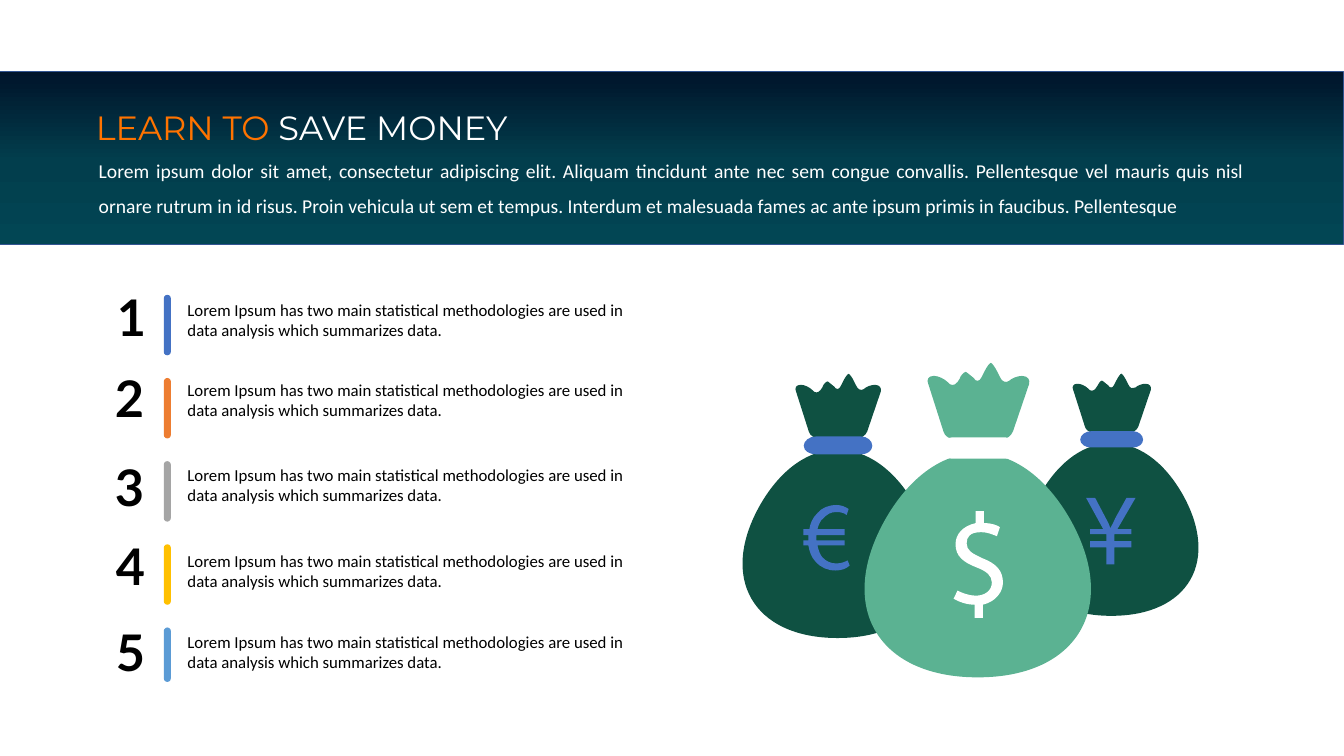
from copy import deepcopy
from dataclasses import dataclass

from lxml.etree import SubElement
from pptx import Presentation
from pptx.dml.color import RGBColor
from pptx.enum.shapes import MSO_SHAPE
from pptx.enum.text import MSO_ANCHOR, MSO_AUTO_SIZE, PP_ALIGN
from pptx.oxml.ns import qn
from pptx.util import Emu, Inches, Pt

COLS, ROWS = 1333.33, 750  # grid cells of a hundredth of an inch
Path = list[tuple[int, ...]]  # pairs are lines, sixes are cubic curves

BODY: Path = [
    (0, 0), (-100, 0, -141, -71, -91, -158),
    (-41, -244, 41, -244, 91, -158), (141, -71, 100, 0, 0, 0),
]
NECK: Path = [
    (44, -299), (40, -299, 34, -297, 31, -294), (28, -292, 24, -293, 22, -298),
    (19, -304), (17, -308, 14, -312, 13, -312), (12, -312, 9, -308, 7, -304),
    (4, -298), (2, -293, -2, -293, -4, -297), (-8, -300, -11, -303, -12, -303),
    (-13, -303, -17, -300, -18, -296), (-20, -293),
    (-23, -289, -27, -289, -30, -293), (-33, -296, -39, -299, -43, -299),
    (-44, -299), (-49, -299, -51, -295, -49, -291), (-34, -244),
    (-33, -239, -27, -236, -23, -236), (24, -236),
    (28, -236, 33, -239, 35, -244), (51, -291), (52, -295, 50, -299, 44, -299),
]
TIE: Path = [
    (41, -227), (41, -221, 35, -217, 28, -217), (-26, -217),
    (-33, -217, -40, -221, -40, -227), (-40, -233, -33, -238, -26, -238),
    (28, -238), (35, -238, 41, -233, 41, -227),
]
EURO: Path = [
    (12, -72), (9, -69, 4, -67, -2, -67), (-10, -67, -17, -70, -22, -76),
    (-26, -80, -28, -86, -29, -92), (-34, -92), (-34, -97), (-29, -97),
    (-29, -102), (-34, -102), (-34, -108), (-28, -108),
    (-27, -114, -25, -119, -20, -124), (-16, -129, -9, -132, -1, -132),
    (4, -132, 8, -130, 11, -128), (9, -122), (7, -124, 3, -125, -1, -125),
    (-7, -125, -10, -123, -14, -119), (-17, -117, -19, -112, -20, -108),
    (7, -108), (7, -102), (-21, -102), (-21, -97), (7, -97), (7, -92),
    (-20, -92), (-19, -87, -17, -82, -15, -80), (-11, -76, -7, -74, -1, -74),
    (4, -74, 8, -76, 10, -77),
]
YEN: Path = [
    (-5, -51), (-5, -68), (-21, -68), (-21, -74), (-5, -74), (-5, -81),
    (-21, -81), (-21, -86), (-8, -86), (-25, -117), (-16, -117), (-5, -96),
    (-3, -93, -2, -90, -1, -87), (1, -90, 2, -93, 4, -97), (15, -117),
    (24, -117), (6, -86), (20, -86), (20, -81), (3, -81), (3, -74), (20, -74),
    (20, -68), (3, -68), (3, -51),
]
DOLLAR: Path = [
    (-3, -59), (-3, -72), (-11, -72, -19, -75, -24, -78), (-20, -86),
    (-16, -84, -9, -81, -2, -81), (7, -81, 14, -86, 14, -94),
    (14, -101, 9, -105, -1, -109), (-14, -114, -22, -120, -22, -132),
    (-22, -142, -15, -150, -2, -153), (-2, -165), (6, -165), (6, -153),
    (14, -153, 19, -151, 22, -149), (19, -140), (16, -141, 11, -144, 3, -144),
    (-8, -144, -11, -139, -11, -133), (-11, -126, -6, -123, 5, -118),
    (18, -113, 25, -106, 25, -94), (25, -85, 18, -75, 5, -72), (5, -59),
]


@dataclass
class Bag:
    x: float
    base: int
    scale: float
    cloth: str
    trim: str
    sign: Path


@dataclass
class Item:
    color: str
    text: int
    left: int
    top: int
    tall: int = 60


BAGS = [
    Bag(831, 633, 0.84, "0F5142", "4472C4", EURO),
    Bag(1102.5, 611, 0.77, "0F5142", "4472C4", YEN),
    Bag(970, 672, 1, "5BB292", "FFFFFF", DOLLAR),
]
ITEMS = [
    Item("4472C4", 291, 103, 279),
    Item("ED7D31", 371, 101, 359),
    Item("A5A5A5", 455, 101, 448),
    Item("FFC000", 540, 102, 526),
    Item("5B9BD5", 621, 102, 611, 54),
]
POINT = ("Lorem Ipsum has two main statistical methodologies are used in "
         "data analysis which summarizes data.")
INTRO = ("Lorem ipsum dolor sit amet, consectetur adipiscing elit. Aliquam "
         "tincidunt ante nec sem congue convallis. Pellentesque vel mauris "
         "quis nisl ornare rutrum in id risus. Proin vehicula ut sem et "
         "tempus. Interdum et malesuada fames ac ante ipsum primis in "
         "faucibus. Pellentesque")


def cell(n: float) -> Emu:
    return Inches(n / 100)


def rgb(code: str) -> RGBColor:
    return RGBColor.from_string(code)


def paint(shape, color: str) -> None:
    shape.shadow.inherit = False
    shape.fill.solid()
    shape.fill.fore_color.rgb = rgb(color)
    shape.line.fill.background()


def block(shapes, kind, x, y, w, h):
    return shapes.add_shape(kind, cell(x), cell(y), cell(w), cell(h))


def bend(shape, path: Path) -> None:
    """Merge each curve's three line segments into one cubic segment."""
    lines = iter(shape._element.findall(".//" + qn("a:lnTo")))
    for part in path[1:]:
        first = next(lines)
        if len(part) == 6:
            curve = first.makeelement(qn("a:cubicBezTo"))
            first.addprevious(curve)
            for line in (first, next(lines), next(lines)):
                SubElement(curve, qn("a:pt"), dict(line[0].attrib))
                line.getparent().remove(line)


def trace(shapes, path: Path, bag: Bag, scale: float, color: str) -> None:
    spots = [(cell(bag.x + part[i] * scale), cell(bag.base + part[i + 1] * scale))
             for part in path for i in range(0, len(part), 2)]
    pen = shapes.build_freeform(*spots[0])
    pen.add_line_segments(spots[1:], close=True)
    shape = pen.convert_to_shape()
    bend(shape, path)
    paint(shape, color)


def draw_bag(shapes, bag: Bag) -> None:
    trace(shapes, BODY, bag, bag.scale, bag.cloth)
    trace(shapes, NECK, bag, bag.scale, bag.cloth)
    trace(shapes, TIE, bag, bag.scale, bag.trim)
    trace(shapes, bag.sign, bag, 1, bag.trim)


def write(slide, text, x, y, w, h, size, color, font="Calibri", pad=(10, 5)):
    box = slide.shapes.add_textbox(cell(x), cell(y), cell(w), cell(h))
    frame = box.text_frame
    frame.word_wrap = True
    frame.auto_size = MSO_AUTO_SIZE.SHAPE_TO_FIT_TEXT
    frame.margin_left = frame.margin_right = cell(pad[0])
    frame.margin_top = frame.margin_bottom = cell(pad[1])
    para = frame.paragraphs[0]
    para.text = text
    para.font.size, para.font.name = Pt(size), font
    para.font.color.rgb = rgb(color)
    return frame


def draw_band(slide) -> None:
    band = block(slide.shapes, MSO_SHAPE.RECTANGLE, -0.5, 71, COLS, 171.4)
    band.shadow.inherit = False
    band.fill.gradient()
    band.fill.gradient_angle = 270
    stops = band._element.spPr.find(".//" + qn("a:gsLst"))
    stops.insert(1, deepcopy(stops[0]))
    shades = [(0, "00142A"), (0.52, "023E4D"), (1, "024654")]
    for stop, (place, shade) in zip(band.fill.gradient_stops, shades):
        stop.position = place
        stop.color.rgb = rgb(shade)
    band.line.color.rgb = rgb("325491")
    band.line.width = Pt(1)
    frame = write(slide, INTRO, 85, 141, 1163, 80, 14, "FFFFFF", pad=(13, 7))
    frame.vertical_anchor = MSO_ANCHOR.MIDDLE
    frame.paragraphs[0].alignment = PP_ALIGN.JUSTIFY
    frame.paragraphs[0].line_spacing = 1.5


def draw_title(slide) -> None:
    title = slide.shapes.title
    slide.shapes._spTree.append(title._element)  # in front of the band
    title.left, title.top = cell(85), cell(93)
    title.width, title.height = cell(470), cell(55)
    frame = title.text_frame
    frame.word_wrap = False
    frame.auto_size = MSO_AUTO_SIZE.SHAPE_TO_FIT_TEXT
    frame.vertical_anchor = MSO_ANCHOR.TOP
    para = frame.paragraphs[0]
    para.alignment, para.line_spacing = PP_ALIGN.LEFT, 1.2
    para.font.size, para.font.name = Pt(24), "Montserrat"
    for text, color in [("LEARN TO ", "FF7300"), ("SAVE MONEY", "FFFFFF")]:
        run = para.add_run()
        run.text = text
        run.font.color.rgb = rgb(color)


def draw_item(slide, i: int, item: Item) -> None:
    write(slide, POINT, 174, item.text, 460, 53, 12, "000000", pad=(12, 6))
    bar = block(slide.shapes, MSO_SHAPE.ROUND_2_SAME_RECTANGLE,
                162.5, 292.5 + 82.5 * i, 7, item.tall)
    bar.adjustments[0] = bar.adjustments[1] = 0.5
    paint(bar, item.color)
    para = write(slide, str(i + 1), item.left, item.top, 55, 71, 36,
                 "000000", "Lato").paragraphs[0]
    para.alignment = PP_ALIGN.CENTER
    para.font.bold = True


deck = Presentation()
deck.slide_width, deck.slide_height = cell(COLS), cell(ROWS)
slide = deck.slides.add_slide(deck.slide_layouts[5])
draw_band(slide)
group = slide.shapes.add_group_shape()
for bag in BAGS:
    draw_bag(group.shapes, bag)
for i, item in enumerate(ITEMS):
    draw_item(slide, i, item)
draw_title(slide)
deck.save("out.pptx")
